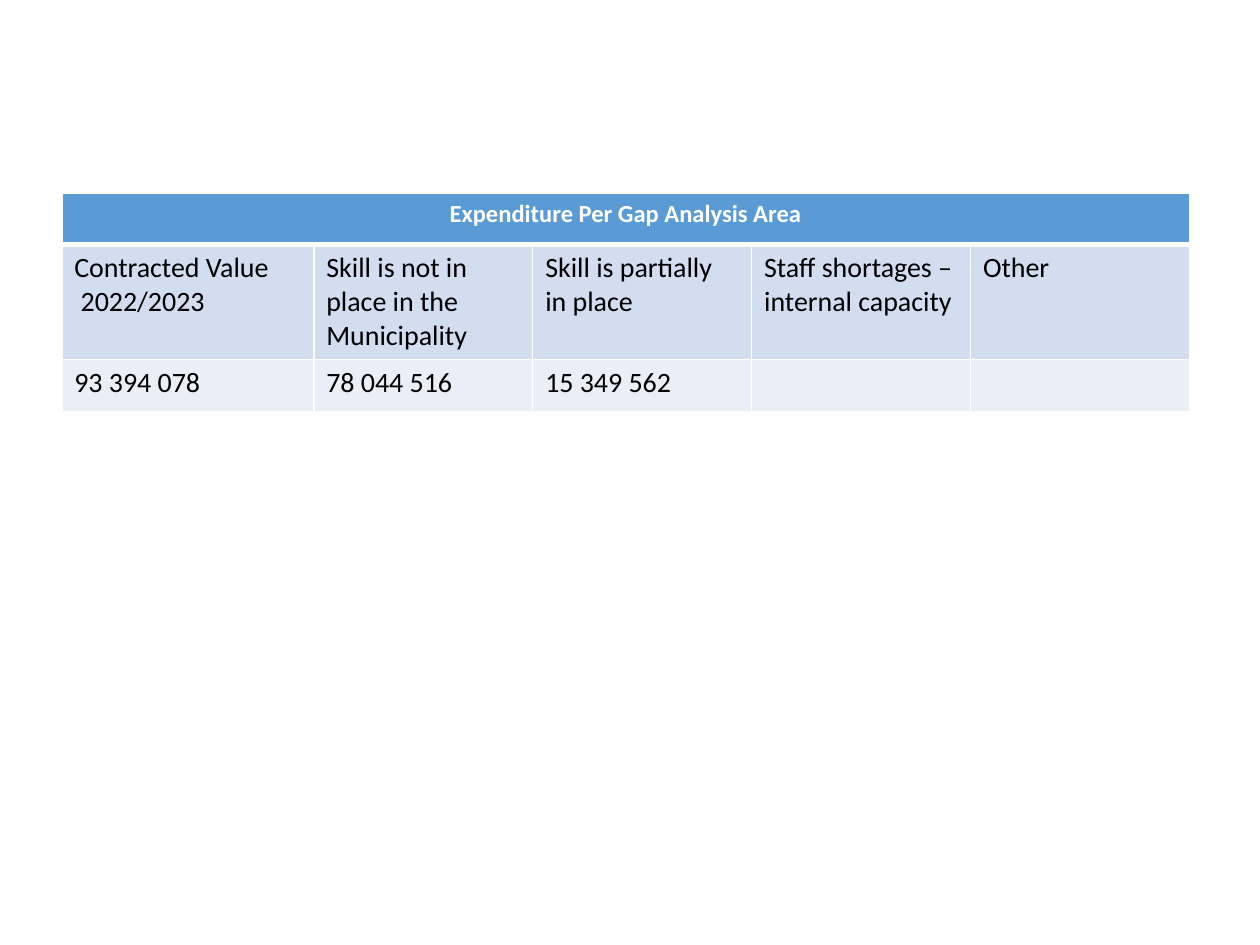
from dataclasses import dataclass

from lxml.etree import SubElement
from pptx import Presentation
from pptx.dml.color import RGBColor
from pptx.enum.text import PP_ALIGN
from pptx.oxml.ns import qn
from pptx.util import Inches, Pt


@dataclass(frozen=True)
class Theme:
    font: str = "Calibri"
    heading_size: int = 14
    body_size: int = 16
    heading_text: str = "FFFFFF"
    body_text: str = "000000"
    border: str = "FFFFFF"
    row_fills: tuple = ("5B9BD5", "D2DEEF", "EAEFF7")
    thin_line: int = 1
    thick_line: int = 3


THEME = Theme()
HEADING = "Expenditure Per Gap Analysis Area"
ROWS = [
    [HEADING, "", "", "", ""],
    ["Contracted Value\n 2022/2023", "Skill is not in place in the Municipality",
     "Skill is partially in place", "Staff shortages – internal capacity", "Other"],
    ["93 394 078", "78 044 516", "15 349 562", "", ""],
]
FIRST_COLUMN = 2
ROW_HEIGHTS = [0.41, 0.89, 0.41]


def set_borders(cell, widths):
    """Draw the cell's edges; widths are points keyed by edge tag."""
    properties = cell._tc.get_or_add_tcPr()
    for tag, width in widths.items():
        line = SubElement(properties, qn(f"a:{tag}"), w=str(Pt(width)))
        fill = SubElement(line, qn("a:solidFill"))
        SubElement(fill, qn("a:srgbClr"), val=THEME.border)


def fill_cell(cell, text, row_number):
    is_heading = row_number == 0
    # Thick rule between the heading and the rows below it
    set_borders(cell, {
        "lnL": THEME.thin_line,
        "lnR": THEME.thin_line,
        "lnT": THEME.thick_line if row_number == 1 else THEME.thin_line,
        "lnB": THEME.thick_line if is_heading else THEME.thin_line,
    })
    cell.fill.solid()
    cell.fill.fore_color.rgb = RGBColor.from_string(THEME.row_fills[row_number])
    cell.text = text
    for para in cell.text_frame.paragraphs:
        para.alignment = PP_ALIGN.CENTER if is_heading else PP_ALIGN.LEFT
        para.font.name = THEME.font
        para.font.size = Pt(THEME.heading_size if is_heading else THEME.body_size)
        para.font.bold = is_heading
        para.font.color.rgb = RGBColor.from_string(
            THEME.heading_text if is_heading else THEME.body_text)


def add_expenditure_table(page, left, top, width, height):
    table = page.shapes.add_table(
        len(ROWS), len(ROWS[0]), left, top, width, height).table

    # Wide first column, the others share the rest
    first, *others = table.columns
    first.width = Inches(FIRST_COLUMN)
    for column in others:
        column.width = (width - first.width) // len(others)
    for row, share in zip(table.rows, ROW_HEIGHTS):
        row.height = int(height * share / sum(ROW_HEIGHTS))

    for row_number, texts in enumerate(ROWS):
        for column_number, text in enumerate(texts):
            fill_cell(table.cell(row_number, column_number), text, row_number)
    table.cell(0, 0).merge(table.cell(0, len(others)))


def main():
    deck = Presentation()
    deck.slide_width, deck.slide_height = Inches(10), Inches(7.5)
    page = deck.slides.add_slide(deck.slide_layouts[6])
    add_expenditure_table(
        page, Inches(0.49), Inches(1.53), Inches(8.95), Inches(1.71))
    deck.save("out.pptx")


if __name__ == "__main__":
    main()
